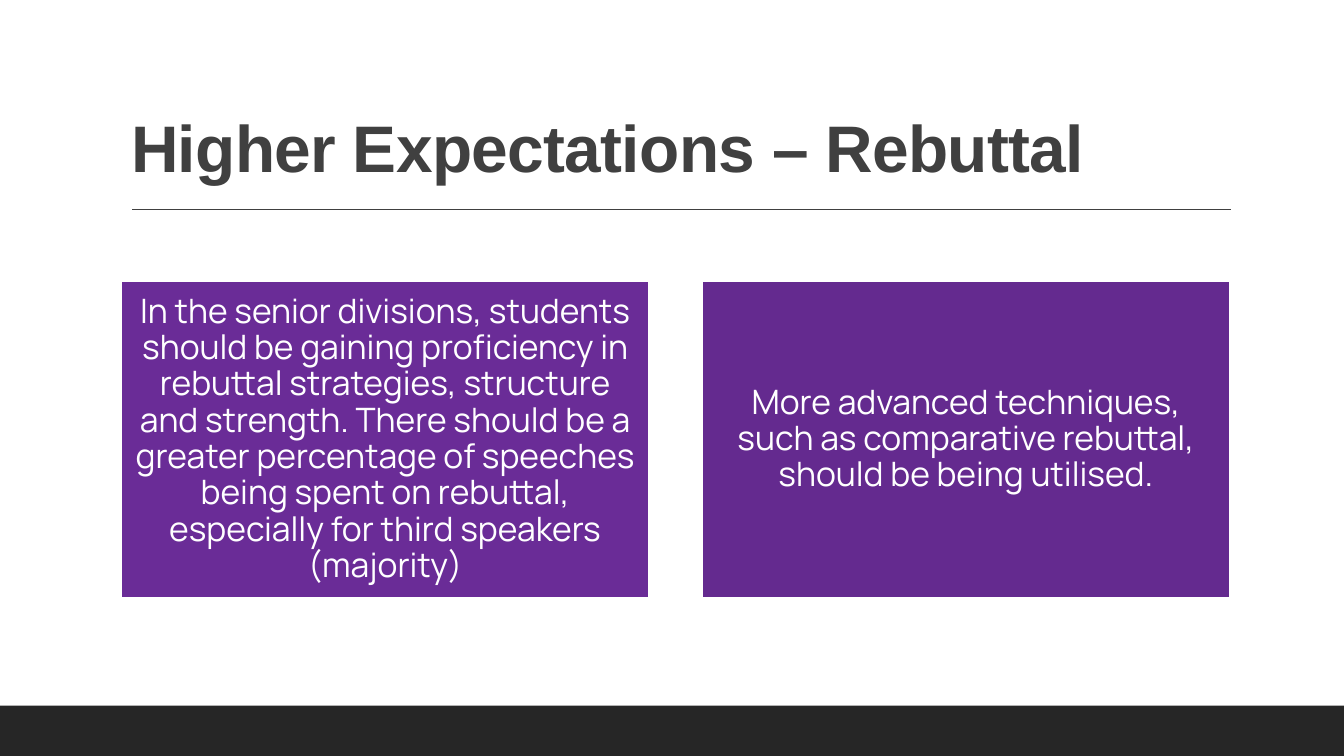
from lxml import etree
from pptx import Presentation
from pptx import util as u
from pptx.dml.color import RGBColor
from pptx.enum import shapes, text
from pptx.oxml.ns import qn

WHITE = RGBColor(0xFF, 0xFF, 0xFF)
GREY = RGBColor(0x40, 0x40, 0x40)
CHARCOAL = RGBColor(0x26, 0x26, 0x26)
PURPLE = RGBColor(0x6A, 0x2C, 0x97)
DEEP_PURPLE = RGBColor(0x64, 0x2A, 0x8F)

TITLE_FONT = {"name": "Arial", "size": u.Pt(47), "bold": True}
CARD_FONT = {"name": "Manrope", "size": u.Pt(24), "bold": False}
CARD_LEFT, CARD_TOP, CARD_WIDTH, CARD_HEIGHT = 1.2, 2.79, 5.24, 3.14
CARD_STEP = 5.76
CARDS = [
    (PURPLE, "In the senior divisions, students should be gaining proficiency in "
             "rebuttal strategies, structure and strength. There should be a greater "
             "percentage of speeches being spent on rebuttal, especially for third "
             "speakers (majority)"),
    (DEEP_PURPLE, "More advanced techniques, such as comparative rebuttal, should be "
                  "being utilised."),
]


def write(sp, words, font, color, align, anchor, margins):
    tf = sp.text_frame
    frame = {"word_wrap": True, "auto_size": text.MSO_AUTO_SIZE.NONE,
             "vertical_anchor": anchor}
    frame.update({f"margin_{side}": u.Inches(size) for side, size in margins.items()})
    for key, value in frame.items():
        setattr(tf, key, value)
    p = tf.paragraphs[0]
    p.alignment, p.line_spacing = align, 0.9
    r = p.add_run()
    r.text = words
    for key, value in font.items():
        setattr(r.font, key, value)
    r.font.color.rgb = color
    return r


def add_title(s, words):
    sp = s.shapes.title
    place = {"left": 1.2, "top": 0.31, "width": 11, "height": 1.59}
    for key, value in place.items():
        setattr(sp, key, u.Inches(value))
    r = write(sp, words, TITLE_FONT, GREY, text.PP_ALIGN.LEFT, text.MSO_ANCHOR.BOTTOM,
              {"left": 0.1, "right": 0.1, "top": 0.05, "bottom": 0.05})
    r.font._element.set("spc", "-50")


def add_rule(s, left, right, y):
    line = s.shapes.add_connector(shapes.MSO_CONNECTOR.STRAIGHT, u.Inches(left),
                                  u.Inches(y), u.Inches(right), u.Inches(y))
    line.line.color.rgb = GREY
    line.line.width = u.Pt(1)
    etree.SubElement(line._element.spPr, qn("a:effectLst"))


def add_block(s, left, top, width, height, fill):
    sp = s.shapes.add_shape(shapes.MSO_SHAPE.RECTANGLE, u.Inches(left), u.Inches(top),
                            u.Inches(width), u.Inches(height))
    sp.shadow.inherit = False
    sp.fill.solid()
    sp.fill.fore_color.rgb = fill
    sp.line.fill.background()
    return sp


def add_card(s, left, fill, words):
    sp = add_block(s, left, CARD_TOP, CARD_WIDTH, CARD_HEIGHT, fill)
    sp.line.color.rgb = WHITE
    sp.line.width = u.Pt(1.25)
    write(sp, words, CARD_FONT, WHITE, text.PP_ALIGN.CENTER, text.MSO_ANCHOR.MIDDLE,
          dict.fromkeys(("left", "right", "top", "bottom"), 0.1))


def main():
    prs = Presentation()
    prs.slide_width, prs.slide_height = u.Inches(13.33), u.Inches(7.5)
    s = prs.slides.add_slide(prs.slide_layouts[5])
    s.background.fill.solid()
    s.background.fill.fore_color.rgb = WHITE
    add_title(s, "Higher Expectations – Rebuttal")
    add_rule(s, 1.31, 12.21, 2.08)
    add_block(s, 0, 7, 13.33, 0.5, CHARCOAL)
    for i, (fill, words) in enumerate(CARDS):
        add_card(s, CARD_LEFT + i * CARD_STEP, fill, words)
    prs.save("out.pptx")


if __name__ == "__main__":
    main()
